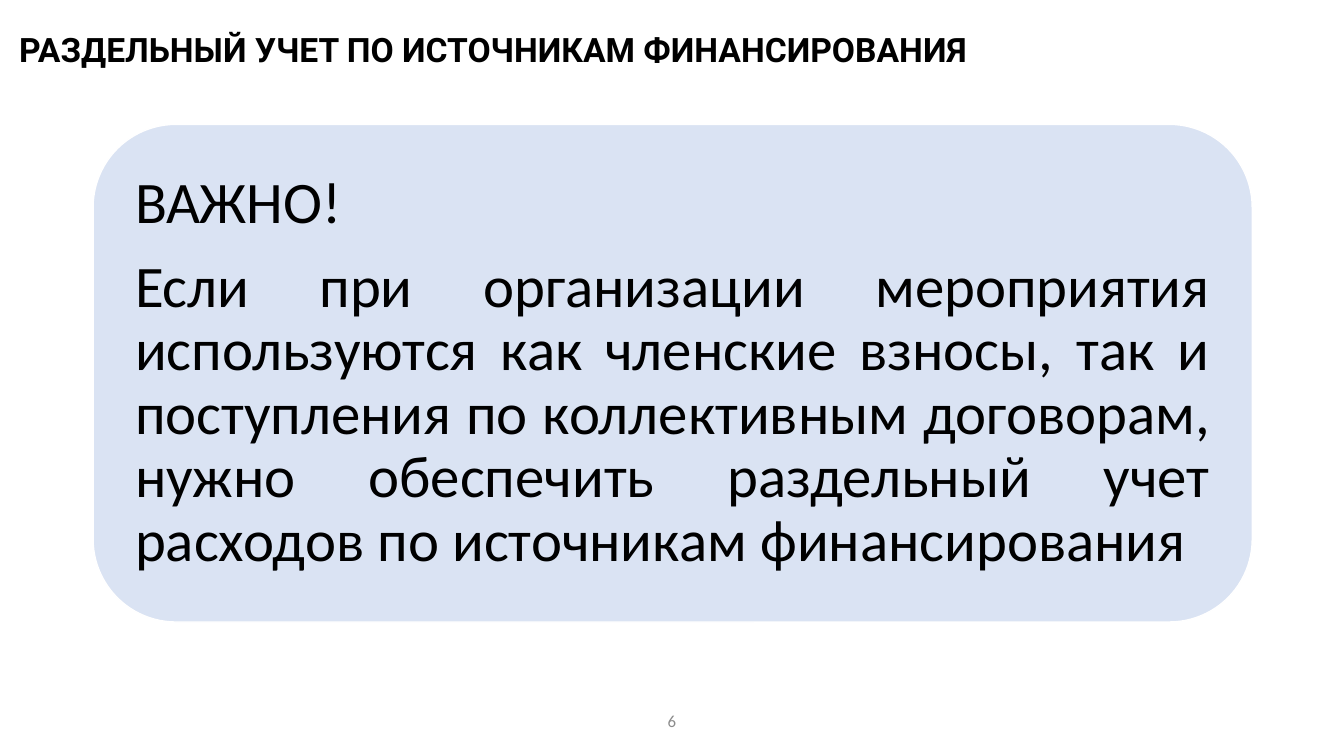
from lxml import etree
from pptx import Presentation
from pptx.dml.color import RGBColor
from pptx.enum import shapes, text
from pptx.oxml import ns
from pptx.util import Pt

BLACK = RGBColor(0x00, 0x00, 0x00)
WHITE = RGBColor(0xFF, 0xFF, 0xFF)
PALE_BLUE = RGBColor(0xDA, 0xE3, 0xF3)
GREY = RGBColor(0x8C, 0x8C, 0x8C)


def set_font(r, name, size, color, bold=False):
    r.font.name = name
    r.font.size = Pt(size)
    r.font.bold = bold
    r.font.color.rgb = color


prs = Presentation()
prs.slide_width, prs.slide_height = Pt(960), Pt(540)
s = prs.slides.add_slide(prs.slide_layouts[5])

# Title with a soft text shadow
title = s.shapes.title
title.left, title.top, title.width, title.height = Pt(6.5), Pt(15.8), Pt(772.5), Pt(42.5)
tf = title.text_frame
tf.text = "РАЗДЕЛЬНЫЙ УЧЕТ ПО ИСТОЧНИКАМ ФИНАНСИРОВАНИЯ"
tf.vertical_anchor = text.MSO_ANCHOR.MIDDLE
tf.auto_size = text.MSO_AUTO_SIZE.NONE
p = tf.paragraphs[0]
p.alignment = text.PP_ALIGN.LEFT
p.line_spacing = 0.9
set_font(p.runs[0], "Roboto", 24, BLACK, bold=True)
shadow = etree.fromstring(
    f'<a:effectLst {ns.nsdecls("a")}>'
    '<a:outerShdw blurRad="38100" dist="38100" dir="2700000" algn="tl">'
    '<a:srgbClr val="000000"><a:alpha val="43000"/></a:srgbClr>'
    '</a:outerShdw></a:effectLst>')
p.runs[0].font.fill._xPr.find(ns.qn("a:solidFill")).addnext(shadow)

# Rounded panel with the message
panel = s.shapes.add_shape(shapes.MSO_SHAPE.ROUNDED_RECTANGLE,
                           Pt(66.5), Pt(88.8), Pt(828), Pt(355.5))
panel.shadow.inherit = False
panel.fill.solid()
panel.fill.fore_color.rgb = PALE_BLUE
panel.line.color.rgb = WHITE
panel.line.width = Pt(1)
tf = panel.text_frame
tf.word_wrap = True
tf.vertical_anchor = text.MSO_ANCHOR.MIDDLE
tf.margin_left = tf.margin_right = tf.margin_top = tf.margin_bottom = Pt(12.6)
tf.text = ("ВАЖНО!\n"
           "Если при организации мероприятия используются как членские взносы, "
           "так и поступления по коллективным договорам, нужно обеспечить "
           "раздельный учет расходов по источникам финансирования")
for p, align in zip(tf.paragraphs, (text.PP_ALIGN.LEFT, text.PP_ALIGN.JUSTIFY)):
    p.alignment = align
    p.line_spacing = 0.9
    p.space_after = Pt(14.7)
    set_font(p.runs[0], "Calibri", 42, BLACK)

# Page number
number = s.shapes.add_textbox(Pt(318), Pt(500.5), Pt(324), Pt(28.8))
tf = number.text_frame
tf.word_wrap = True
tf.vertical_anchor = text.MSO_ANCHOR.MIDDLE
tf.text = "6"
p = tf.paragraphs[0]
p.alignment = text.PP_ALIGN.CENTER
set_font(p.runs[0], "Calibri", 12, GREY)

prs.save("out.pptx")
